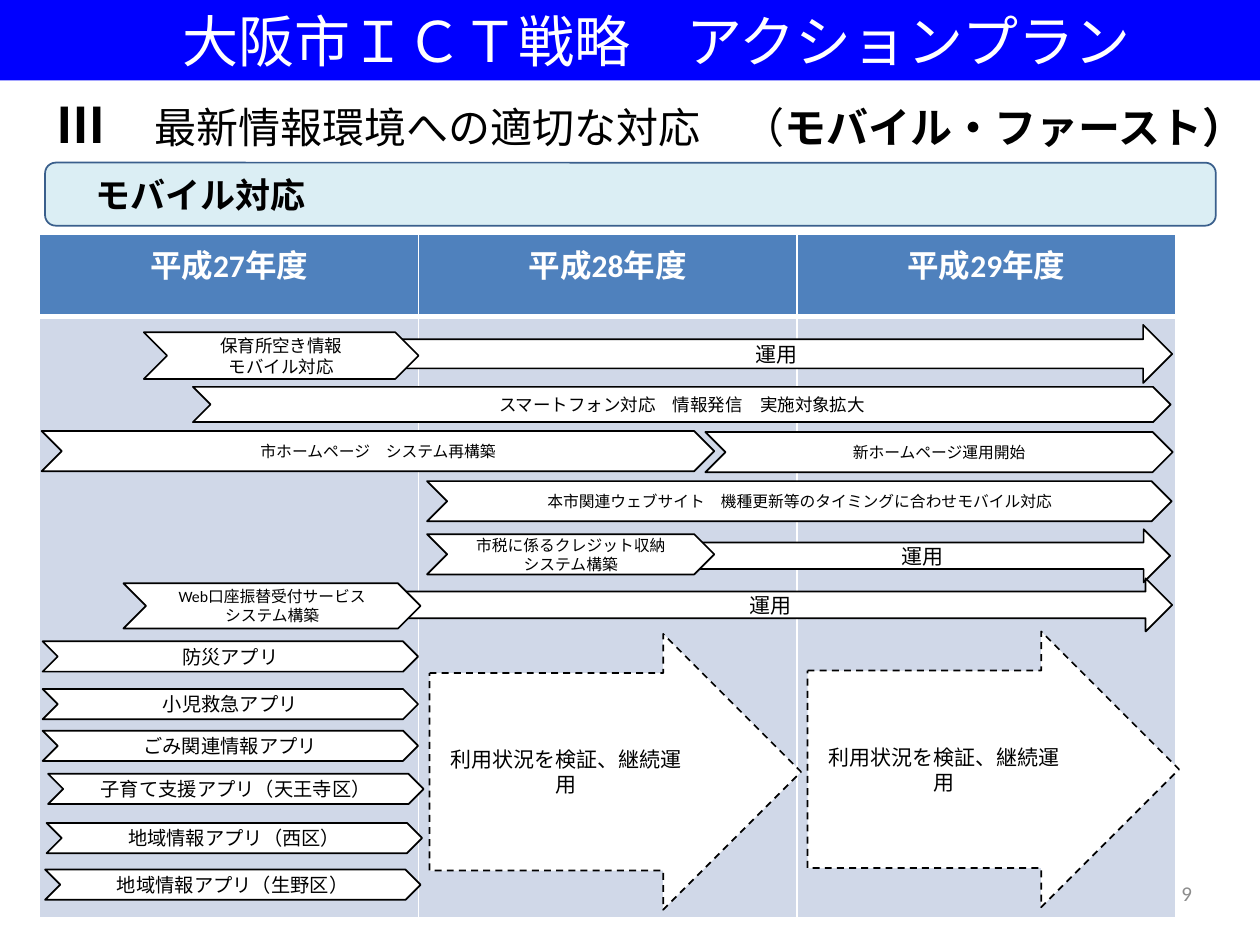
from lxml import etree
from pptx import Presentation
from pptx import util as u
from pptx.dml.color import RGBColor
from pptx.enum import dml, shapes, text
from pptx.oxml import ns

COLORS = {"bar": "0000FF", "header": "4F81BD", "body": "D0D8E8", "band": "DBEEF4",
          "band_line": "3A5F8C", "white": "FFFFFF", "black": "000000", "number": "8C8C8C"}
KINDS = {"chevron": shapes.MSO_SHAPE.CHEVRON, "arrow": shapes.MSO_SHAPE.RIGHT_ARROW,
         "round": shapes.MSO_SHAPE.ROUNDED_RECTANGLE}
CENTER = text.PP_ALIGN.CENTER


def style(para, size, color="black", align=CENTER, bold=False, name="Calibri"):
    para.alignment = align
    para.font.size = u.Pt(size)
    para.font.name = name
    para.font.bold = bold
    para.font.color.rgb = RGBColor.from_string(COLORS[color])


def add_box(parent, kind, place, label, size, fill="white", line="black", **font):
    box = parent.shapes.add_shape(KINDS[kind], *map(u.Cm, place))
    box.shadow.inherit = False
    box.fill.solid()
    box.fill.fore_color.rgb = RGBColor.from_string(COLORS[fill])
    box.line.color.rgb = RGBColor.from_string(COLORS[line])
    box.line.width = u.Pt(1)
    frame = box.text_frame
    frame.word_wrap = True
    frame.vertical_anchor = text.MSO_ANCHOR.MIDDLE
    frame.text = label
    for para in frame.paragraphs:
        style(para, size, **font)
    return box


deck = Presentation()
deck.slide_width, deck.slide_height = u.Cm(25.4), u.Cm(19.05)
page = deck.slides.add_slide(deck.slide_layouts[5])

title = page.shapes.title
title.left, title.top, title.width, title.height = map(u.Cm, (-0.05, 0, 25.45, 1.62))
title.fill.solid()
title.fill.fore_color.rgb = RGBColor.from_string(COLORS["bar"])
title.text_frame.auto_size = text.MSO_AUTO_SIZE.NONE
title.text_frame.vertical_anchor = text.MSO_ANCHOR.MIDDLE
title.text_frame.text = "　大阪市ＩＣＴ戦略　アクションプラン"
style(title.text_frame.paragraphs[0], 32, "white", name="Noto Sans CJK JP")

number = page.shapes.add_textbox(*map(u.Cm, (18.36, 17.5, 5.92, 1.02)))
number.text_frame.word_wrap = True
number.text_frame.vertical_anchor = text.MSO_ANCHOR.MIDDLE
number.text_frame.text = "9"
style(number.text_frame.paragraphs[0], 12, "number", text.PP_ALIGN.RIGHT)

years = ["平成27年度", "平成28年度", "平成29年度"]
plan = page.shapes.add_table(2, 3, *map(u.Cm, (0.8, 4.73, 22.9, 13.78))).table
plan.rows[0].height, plan.rows[1].height = u.Cm(1.65), u.Cm(12.13)
for column, year in enumerate(years):
    for row, color in enumerate(("header", "body")):
        cell = plan.cell(row, column)
        cell.fill.solid()
        cell.fill.fore_color.rgb = RGBColor.from_string(COLORS[color])
        edge = etree.Element(ns.qn(("a:lnB", "a:lnT")[row]), w=str(u.Pt(3)))
        paint = etree.SubElement(edge, ns.qn("a:solidFill"))
        etree.SubElement(paint, ns.qn("a:srgbClr"), val=COLORS["white"])
        cell.fill._xPr.insert(0, edge)
    head = plan.cell(0, column).text_frame
    head.text = year
    style(head.paragraphs[0], 18, "white", bold=True)

add_box(page, "round", (0.91, 3.28, 23.6, 1.27), "　モバイル対応", 20, "band", "band_line",
        align=text.PP_ALIGN.LEFT, bold=True, name="Arial")

heading = page.shapes.add_textbox(*map(u.Cm, (0.89, 1.78, 24.4, 1.45)))
heading.text_frame.word_wrap = True
heading.text_frame.margin_right = 0
para = heading.text_frame.paragraphs[0]
style(para, 24, align=text.PP_ALIGN.LEFT)
for words, size, name, bold in [("Ⅲ　", 28, "Calibri", True),
                                ("最新情報環境への適切な対応　（", 24, "Arial", False),
                                ("モバイル・ファースト）", 24, "Calibri", True)]:
    span = para.add_run()
    span.text = words
    span.font.size, span.font.name, span.font.bold = u.Pt(size), name, bold
etree.SubElement(span.font._element, ns.qn("a:ea"), typeface="Calibri")

steps = [
    ("arrow", (7.98, 6.55, 15.65, 1.17), "運用", 12),
    ("chevron", (2.9, 6.7, 5.54, 0.94), "保育所空き情報\nモバイル対応", 10),
    ("chevron", (3.89, 7.8, 19.71, 0.71), "スマートフォン対応　情報発信　実施対象拡大", 10),
    ("chevron", (14.22, 8.71, 9.42, 0.81), "新ホームページ運用開始", 9),
    ("chevron", (0.84, 8.69, 13.56, 0.81), "市ホームページ　システム再構築", 9),
    ("chevron", (8.61, 9.7, 15.01, 0.81),
     "本市関連ウェブサイト　機種更新等のタイミングに合わせモバイル対応", 9),
    ("arrow", (13.89, 10.67, 9.7, 1.07), "運用", 12),
    ("chevron", (8.61, 10.77, 5.79, 0.81), "市税に係るクレジット収納\nシステム構築", 9),
    ("arrow", (7.7, 11.66, 15.93, 1.07), "運用", 12),
    ("chevron", (2.49, 11.76, 5.99, 0.91), "Web口座振替受付サービス\nシステム構築", 9),
]
for step in steps:
    add_box(page, *step)

apps = [(0.86, 12.93, "防災アプリ"), (0.86, 13.89, "小児救急アプリ"),
        (0.86, 14.73, "ごみ関連情報アプリ"), (0.97, 15.6, "子育て支援アプリ（天王寺区）"),
        (0.94, 16.59, "地域情報アプリ（西区）"), (0.91, 17.53, "地域情報アプリ（生野区）")]
app_group = page.shapes.add_group_shape()
for left, top, label in apps:
    add_box(app_group, "chevron", (left, top, 7.57, 0.61), label, 11)

for left, top in [(8.66, 12.78), (16.28, 12.73)]:
    review = add_box(page, "arrow", (left, top, 7.49, 5.56), "利用状況を検証、継続運用", 12)
    review.adjustments[0] = 0.716
    review.line.dash_style = dml.MSO_LINE.DASH

deck.save("out.pptx")
